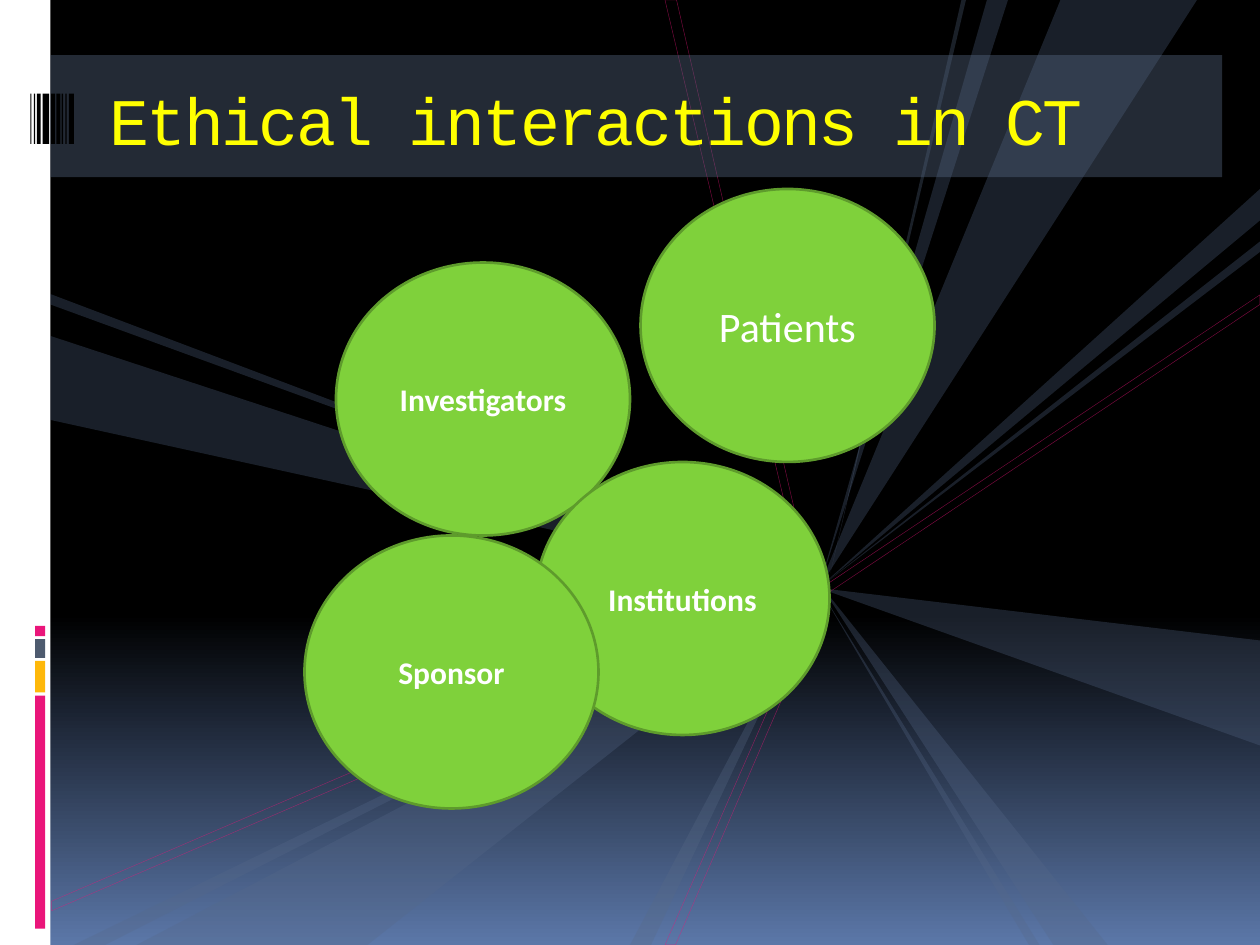
from copy import deepcopy

from pptx import Presentation
from pptx.dml.color import RGBColor
from pptx.enum.shapes import MSO_SHAPE
from pptx.enum.text import MSO_ANCHOR, PP_ALIGN
from pptx.oxml.ns import qn
from pptx.util import Pt

RECT, OVAL = MSO_SHAPE.RECTANGLE, MSO_SHAPE.OVAL
MIDDLE, TOP = MSO_ANCHOR.MIDDLE, MSO_ANCHOR.TOP
CENTER = PP_ALIGN.CENTER

BLACK, WHITE, YELLOW = "000000", "FFFFFF", "FFFF00"
PINK, AMBER, SLATE = "EA157A", "FEB80A", "4E5B6F"
RAY, BAND, GREEN, DARK_GREEN = "566989", "586A86", "7FD13B", "5E9B2C"

APEX = (468, 336)
EDGE = 28.8


def rgb(color):
    return RGBColor.from_string(color)


class SlideBuilder:
    """Holds the slide and draws each kind of element in its style."""

    def __init__(self, s):
        self.s = s

    def background(self, stops, angle):
        fill = self.s.background.fill
        fill.gradient()
        fill.gradient_angle = angle
        gs_list = self.s._element.find(".//" + qn("a:gsLst"))
        while len(gs_list) < len(stops):
            gs_list.append(deepcopy(gs_list[0]))
        for stop, (position, color) in zip(fill.gradient_stops, stops):
            stop.position = position
            stop.color.rgb = rgb(color)

    def paint(self, fill, color, opacity=100):
        fill.solid()
        fill.fore_color.rgb = rgb(color)
        if opacity < 100:
            clr = fill._xPr.find(".//" + qn("a:srgbClr"))
            alpha = clr.makeelement(qn("a:alpha"), {"val": str(opacity * 1000)})
            clr.append(alpha)

    def shape(self, kind, x, y, w, h, color, opacity=100):
        sp = self.s.shapes.add_shape(kind, Pt(x), Pt(y), Pt(w), Pt(h))
        sp.shadow.inherit = False
        self.paint(sp.fill, color, opacity)
        sp.line.fill.background()
        return sp

    def polygon(self, points):
        corners = [(Pt(x), Pt(y)) for x, y in points]
        builder = self.s.shapes.build_freeform(*corners[0])
        builder.add_line_segments(corners[1:], close=True)
        sp = builder.convert_to_shape()
        sp.shadow.inherit = False
        return sp

    def ray(self, points, color=RAY):
        sp = self.polygon(points)
        self.paint(sp.fill, color, 30)
        sp.line.fill.background()

    def outline(self, points):
        sp = self.polygon(points)
        sp.fill.background()
        sp.line.width = Pt(0.25)
        self.paint(sp.line.fill, PINK, 53)

    def set_text(self, tf, text, font, size, color, bold=False):
        p = tf.paragraphs[0]
        p.text = text
        p.font.name, p.font.size, p.font.bold = font, Pt(size), bold
        p.font.color.rgb = rgb(color)
        return p

    def title(self, text, x, y, w, h):
        tf = self.s.shapes.add_textbox(Pt(x), Pt(y), Pt(w), Pt(h)).text_frame
        tf.word_wrap = True
        tf.vertical_anchor = TOP
        tf.margin_top = Pt(5)
        p = self.set_text(tf, text, "Courier New", 38, YELLOW)
        p.runs[0]._r.get_or_add_rPr().set("spc", "-150")

    def circle(self, text, x, y, size=18, bold=True):
        sp = self.shape(OVAL, x, y, 168, 156, GREEN)
        sp.line.color.rgb = rgb(DARK_GREEN)
        sp.line.width = Pt(1.5)
        tf = sp.text_frame
        tf.vertical_anchor = MIDDLE
        self.set_text(tf, text, "Calibri", size, WHITE, bold).alignment = CENTER


def main():
    prs = Presentation()
    prs.slide_width, prs.slide_height = Pt(720), Pt(540)
    b = SlideBuilder(prs.slides.add_slide(prs.slide_layouts[6]))
    b.background([(0, BLACK), (0.65, BLACK), (1, "5B77A8")], 270)

    b.shape(RECT, 0, 0, EDGE, 540, WHITE)
    for y, h, color in [(397.5, 133.2, PINK), (377.7, 18, AMBER),
                        (365.2, 10.8, SLATE), (357.7, 5.8, PINK)]:
        b.shape(RECT, 20, y, 5.8, h, color)

    b.outline([(380, 540), (469.4, 336), (720, 168.5), (720, 174), (473, 339), (386, 540)])
    b.outline([(29.5, 515), (29.5, 520.5), (463.7, 333.4), (386.6, 0), (380, 0), (458.6, 330.5)])

    b.ray([(552, 0), (474.5, 327.6), (549.4, 0)], BAND)
    for start, end, tip in [
        ((606, 0), (684, 0), APEX),
        ((720, 366), (720, 426), APEX),
        ((564, 0), (576, 0), APEX),
        ((602, 540), (633, 540), (468.7, 334)),
        ((588, 540), (594, 540), APEX),
        ((720, 108), (720, 126), APEX),
        ((720, 138), (720, 144), APEX),
        ((78, 540), (210, 540), APEX),
        ((42, 540), (60, 540), (462, 336)),
        ((EDGE, 192), (EDGE, 240), (466.6, 336)),
        ((EDGE, 168), (EDGE, 174), (473, 336)),
    ]:
        b.ray([start, end, tip])
    b.ray([(360, 540), (372, 540), APEX], BAND)

    b.shape(RECT, EDGE, 31.5, 669.6, 69.8, BAND, 40)
    for x, w in [(17.3, 0.6), (19.4, 0.8), (21.1, 2.2), (24.4, 3.7), (29.3, 2.2),
                 (32.3, 2.2), (35.3, 0.8), (37.4, 0.8), (39.4, 2.9)]:
        b.shape(RECT, x, 53.5, w, 28.8, BLACK)

    b.title("Ethical interactions in CT", 55.5, 40.3, 642.3, 61.2)
    b.circle("Patients", 366, 108, size=24, bold=False)
    b.circle("Investigators", 192, 150)
    b.circle("Institutions", 306, 264)
    b.circle("Sponsor", 174, 306)
    prs.save("out.pptx")


if __name__ == "__main__":
    main()
